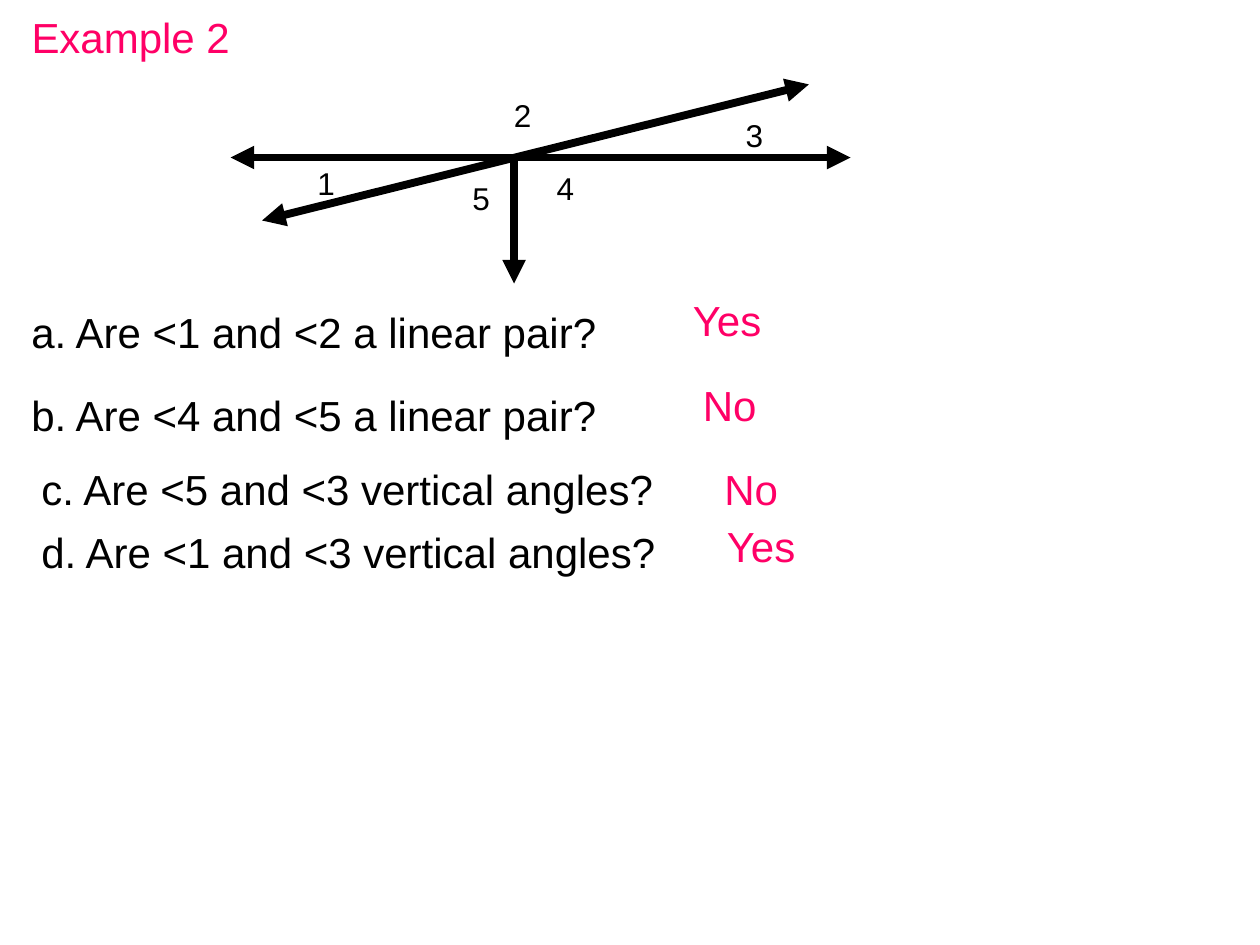
from typing import NamedTuple

from lxml.etree import SubElement
from pptx import Presentation
from pptx.dml.color import RGBColor
from pptx.enum.shapes import MSO_CONNECTOR
from pptx.enum.text import MSO_ANCHOR, MSO_AUTO_SIZE, PP_ALIGN
from pptx.oxml.ns import qn
from pptx.util import Inches, Pt

COLORS = {"ink": "000000", "pink": "FF0066"}
FONT = "Arial"


class Label(NamedTuple):
    text: str
    left: float
    top: float
    width: float
    height: float = 0.5
    size: int = 24
    color: str = "ink"


class Ray(NamedTuple):
    start: tuple[float, float]
    end: tuple[float, float]
    ends: tuple[str, ...] = ("headEnd", "tailEnd")


def angle(text: str, left: float, top: float) -> Label:
    return Label(text, left, top, 0.34, 0.4, 18)


def answer(text: str, left: float, top: float) -> Label:
    width = 0.78 if text == "Yes" else 0.63
    return Label(text, left, top, width, color="pink")


TITLE = Label("Example 2", 0.15, 0.04, 1.78, color="pink")

RAYS = [
    Ray((1.83, 1.25), (6.75, 1.25)),
    Ray((2.08, 1.75), (6.42, 0.67)),
    Ray((4.08, 1.25), (4.08, 2.25), ("tailEnd",)),
]

LABELS = [
    angle("1", 2.42, 1.25),
    angle("2", 3.98, 0.71),
    angle("3", 5.82, 0.87),
    angle("4", 4.32, 1.29),
    angle("5", 3.65, 1.37),
    Label("a. Are <1 and <2 a linear pair?", 0.15, 2.38, 4.71),
    answer("Yes", 5.4, 2.29),
    Label("b. Are <4 and <5 a linear pair?", 0.15, 3.04, 4.71),
    answer("No", 5.48, 2.96),
    Label("c. Are <5 and <3 vertical angles?", 0.23, 3.63, 5.08),
    answer("No", 5.65, 3.63),
    Label("d. Are <1 and <3 vertical angles?", 0.23, 4.13, 5.1),
    answer("Yes", 5.67, 4.08),
]


def write(shape, label: Label) -> None:
    """Place a text shape and fill it with one styled run."""
    shape.left, shape.top = Inches(label.left), Inches(label.top)
    shape.width, shape.height = Inches(label.width), Inches(label.height)
    frame = shape.text_frame
    frame.word_wrap = False
    frame.auto_size = MSO_AUTO_SIZE.SHAPE_TO_FIT_TEXT
    frame.vertical_anchor = MSO_ANCHOR.TOP
    para = frame.paragraphs[0]
    para.alignment = PP_ALIGN.LEFT
    run = para.add_run()
    run.text = label.text
    run.font.name = FONT
    run.font.size = Pt(label.size)
    run.font.color.rgb = RGBColor.from_string(COLORS[label.color])


def draw(slide, ray: Ray) -> None:
    """Draw a thick line with triangle arrowheads."""
    points = [Inches(n) for n in ray.start + ray.end]
    line = slide.shapes.add_connector(MSO_CONNECTOR.STRAIGHT, *points)
    line.line.width = Pt(4.5)
    line.line.color.rgb = RGBColor.from_string(COLORS["ink"])
    for end in ray.ends:
        SubElement(line.line._get_or_add_ln(), qn(f"a:{end}"), type="triangle")
    SubElement(line._element.spPr, qn("a:effectLst"))


def main() -> None:
    deck = Presentation()
    deck.slide_width, deck.slide_height = Inches(10), Inches(7.5)
    slide = deck.slides.add_slide(deck.slide_layouts.get_by_name("Title Only"))

    # Title
    write(slide.shapes.title, TITLE)

    # Crossing lines
    for ray in RAYS:
        draw(slide, ray)

    # Angle numbers, questions and answers
    for label in LABELS:
        write(slide.shapes.add_textbox(0, 0, 0, 0), label)

    deck.save("out.pptx")


if __name__ == "__main__":
    main()
